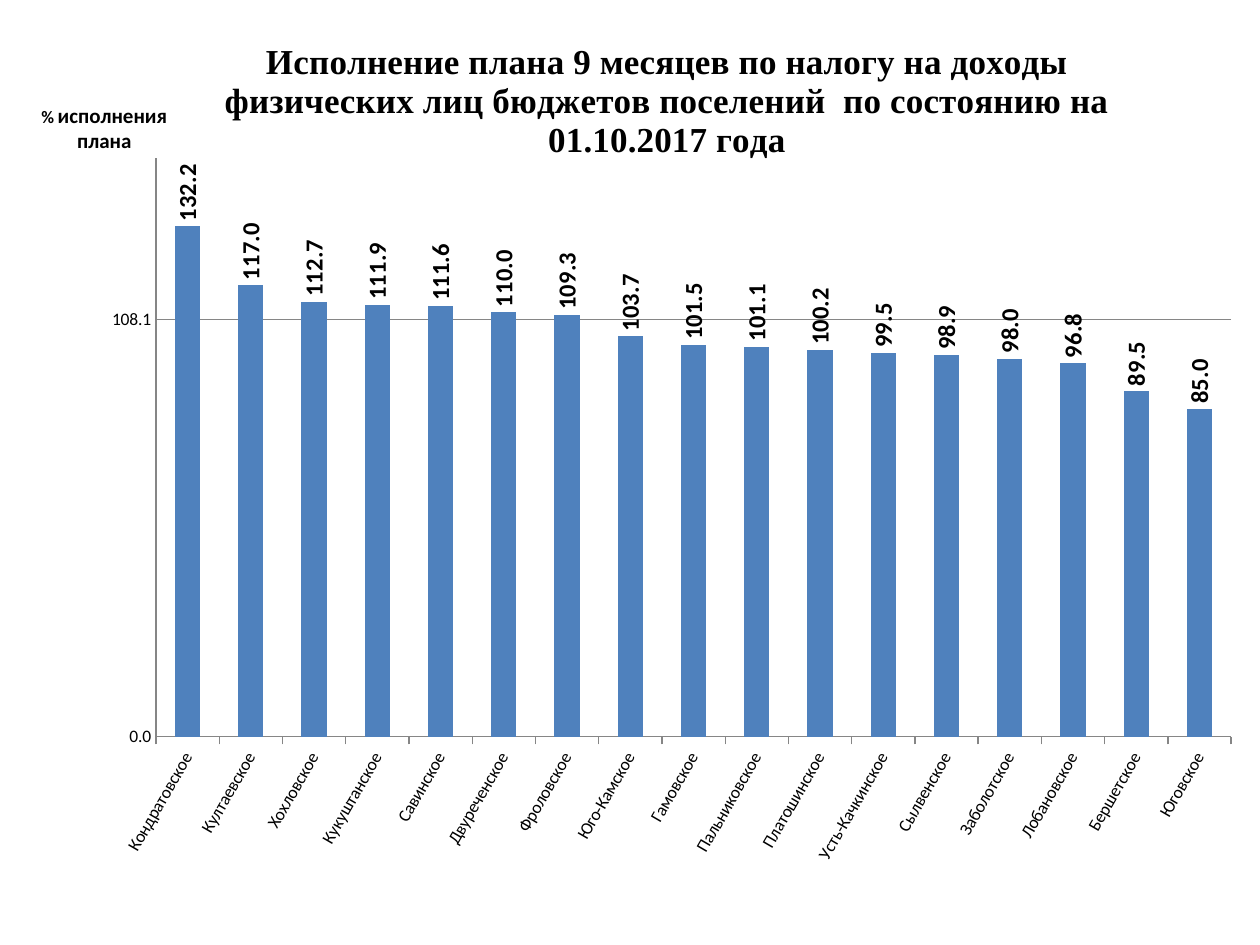
from lxml import etree
from pptx import Presentation
from pptx.chart.data import CategoryChartData
from pptx.dml.color import RGBColor
from pptx.enum.chart import XL_CHART_TYPE, XL_LABEL_POSITION, XL_TICK_MARK
from pptx.oxml import parse_xml
from pptx.oxml.ns import nsdecls, qn
from pptx.util import Pt

BLACK, BAR_BLUE, AXIS_GRAY = "000000", "4F81BD", "868686"
AVERAGE = 108.1

SETTLEMENTS = {
    "Кондратовское": 132.2, "Култаевское": 117, "Хохловское": 112.7,
    "Кукуштанское": 111.9, "Савинское": 111.6, "Двуреченское": 110,
    "Фроловское": 109.3, "Юго-Камское": 103.7, "Гамовское": 101.5,
    "Пальниковское": 101.1, "Платошинское": 100.2, "Усть-Качкинское": 99.5,
    "Сылвенское": 98.9, "Заболотское": 98, "Лобановское": 96.8,
    "Бершетское": 89.5, "Юговское": 85,
}


def color(hex_code):
    return RGBColor.from_string(hex_code)


def style_font(font, size, bold=False, name="Calibri"):
    font.size, font.bold, font.name = Pt(size), bold, name
    font.color.rgb = color(BLACK)


def add_span(para, text, size, name="Calibri"):
    span = para.add_run()
    span.text = text
    style_font(span.font, size, True, name)


def set_layout(parent, left, top, width=None, height=None):
    """Give a title or the plot area a fixed place, in fractions of the chart."""
    for old in parent.findall(qn("c:layout")):
        parent.remove(old)
    inner = '<c:layoutTarget val="inner"/>' if width else ""
    size = f'<c:w val="{width}"/><c:h val="{height}"/>' if width else ""
    layout = parse_xml(
        f'<c:layout {nsdecls("c")}><c:manualLayout>{inner}'
        '<c:xMode val="edge"/><c:yMode val="edge"/>'
        f'<c:x val="{left}"/><c:y val="{top}"/>{size}</c:manualLayout></c:layout>')
    text = parent.find(qn("c:tx"))
    if text is None:
        parent.insert(0, layout)
    else:
        text.addnext(layout)


def rotate_text(element, degrees):
    body = next(element.iter(qn("a:bodyPr")))
    body.set("rot", str(degrees * 60000))
    body.set("vert", "horz")


def style_axis(axis):
    style_font(axis.tick_labels.font, 10)
    axis.format.line.color.rgb = color(AXIS_GRAY)
    axis.format.line.width = Pt(0.75)


def add_plan_chart(page, box):
    data = CategoryChartData(number_format="0.0")
    data.categories = list(SETTLEMENTS)
    data.add_series("Series 1", list(SETTLEMENTS.values()))
    chart = page.shapes.add_chart(XL_CHART_TYPE.COLUMN_CLUSTERED, *box, data).chart
    style_font(chart.font, 10)
    chart.has_legend = False
    set_layout(next(chart.element.iter(qn("c:plotArea"))), 0.12, 0.164, 0.862, 0.617)

    # Heading
    chart.has_title = True
    heading = chart.chart_title
    add_span(heading.text_frame.paragraphs[0],
             "Исполнение плана 9 месяцев по налогу на доходы физических лиц "
             "бюджетов поселений  по состоянию на 01.10.2017 года",
             20, "Times New Roman")
    heading.include_in_layout = False
    set_layout(heading._element, 0.17, 0.03)

    # Columns and their upright labels
    plot = chart.plots[0]
    plot.gap_width = 150
    plot.vary_by_categories = False
    columns = plot.series[0]
    columns.format.fill.solid()
    columns.format.fill.fore_color.rgb = color(BAR_BLUE)
    labels = columns.data_labels
    labels.show_value = True
    labels.number_format = "#,##0.0"
    labels.number_format_is_linked = False
    labels.position = XL_LABEL_POSITION.OUTSIDE_END
    style_font(labels.font, 14, True)
    rotate_text(labels._element, -90)

    # Settlement names
    names = chart.category_axis
    style_axis(names)
    names.major_tick_mark = XL_TICK_MARK.OUTSIDE
    rotate_text(names._element.find(qn("c:txPr")), -60)

    # Percent scale with one line at the average
    scale = chart.value_axis
    style_axis(scale)
    scale.minimum_scale, scale.maximum_scale = 0, 150
    scale.major_unit = AVERAGE
    scale.major_tick_mark = XL_TICK_MARK.NONE
    scale.tick_labels.number_format = "0.0"
    scale.tick_labels.number_format_is_linked = False
    scale.has_major_gridlines = True
    scale.major_gridlines.format.line.color.rgb = color(AXIS_GRAY)
    scale.major_gridlines.format.line.width = Pt(0.75)

    # Scale title
    scale.has_title = True
    frame = scale.axis_title.text_frame
    add_span(frame.paragraphs[0], "% ", 10)
    add_span(frame.paragraphs[0], "исполнения", 12)
    add_span(frame.add_paragraph(), "плана", 12)
    title = scale.axis_title._element
    rotate_text(title, 0)
    set_layout(title, 0.025, 0.1)
    overlay = title.find(qn("c:overlay"))
    if overlay is None:
        overlay = etree.Element(qn("c:overlay"))
        title.find(qn("c:layout")).addnext(overlay)
    overlay.set("val", "1")


def main():
    deck = Presentation()
    deck.slide_width, deck.slide_height = Pt(720), Pt(540)
    page = deck.slides.add_slide(deck.slide_layouts[6])
    add_plan_chart(page, (Pt(3.6), Pt(2.2), Pt(712.8), Pt(536.4)))
    deck.save("out.pptx")


if __name__ == "__main__":
    main()
